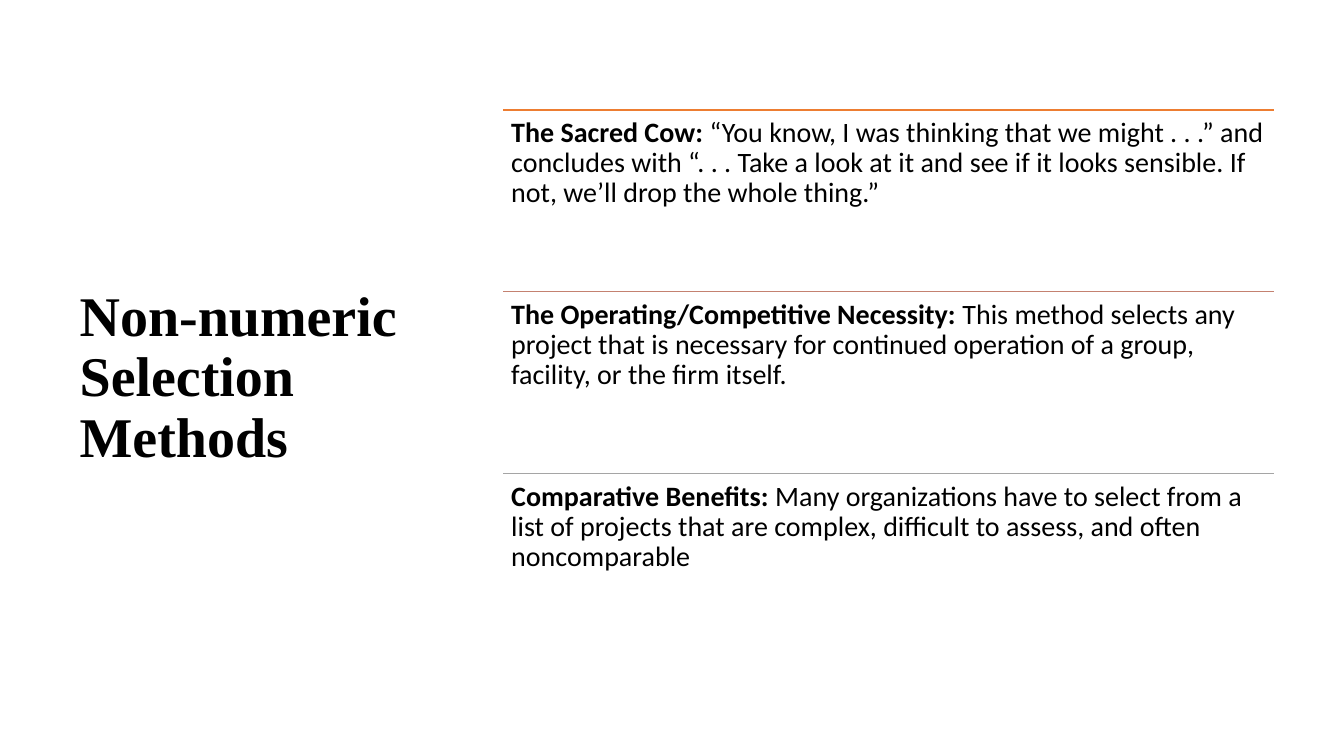
import pptx
import pptx.util
import pptx.dml.color
import pptx.enum.shapes
import pptx.enum.text
import pptx.oxml.ns
from lxml import etree

Inches = pptx.util.Inches
Pt = pptx.util.Pt
WIDTH, HEIGHT = 13.33, 7.5
LEFT, TOP, COL, ROW = 4.99, 1.09, 7.65, 1.805
COLORS = {"text": "000000", "orange": "ED7D31", "rose": "C48170", "gray": "A5A5A5"}
TITLE_FONT = {"name": "Times New Roman", "size": Pt(40), "bold": True}
BODY_FONT = {"name": "Calibri", "size": Pt(20)}
TITLE_BOX = {"left": Inches(0.69), "top": Inches(0.7),
             "width": Inches(3.74), "height": Inches(6.11)}
TITLE_FRAME = {"word_wrap": True,
               "auto_size": pptx.enum.text.MSO_AUTO_SIZE.NONE,
               "vertical_anchor": pptx.enum.text.MSO_ANCHOR.MIDDLE}
INSET = Inches(0.08)
BODY_FRAME = {"word_wrap": True,
              "vertical_anchor": pptx.enum.text.MSO_ANCHOR.TOP,
              "margin_left": INSET, "margin_top": INSET,
              "margin_right": INSET, "margin_bottom": INSET}
PARAGRAPH = {"line_spacing": 0.9, "alignment": pptx.enum.text.PP_ALIGN.LEFT,
             "space_before": Pt(0)}
METHODS = [
    ("orange", "The Sacred Cow: ",
     "“You know, I was thinking that we might . . .” and concludes with “. . . Take a look "
     "at it and see if it looks sensible. If not, we’ll drop the whole thing.”"),
    ("rose", "The Operating/Competitive Necessity: ",
     "This method selects any project that is necessary for continued operation of a group, "
     "facility, or the firm itself."),
    ("gray", "Comparative Benefits: ",
     "Many organizations have to select from a list of projects that are complex, difficult "
     "to assess, and often noncomparable"),
]


def apply(target, values):
    for name, value in values.items():
        setattr(target, name, value)


def rgb(name):
    return pptx.dml.color.RGBColor.from_string(COLORS[name])


def add_run(p, text, font):
    r = p.add_run()
    r.text = text
    apply(r.font, font)
    r.font.color.rgb = rgb("text")


def add_title(s, text):
    sp = s.shapes.title
    apply(sp, TITLE_BOX)
    apply(sp.text_frame, TITLE_FRAME)
    p = sp.text_frame.paragraphs[0]
    apply(p, PARAGRAPH)
    add_run(p, text, TITLE_FONT)


def add_rule(s, top, color):
    y = Inches(top)
    line = s.shapes.add_connector(pptx.enum.shapes.MSO_CONNECTOR.STRAIGHT,
                                  Inches(LEFT), y, Inches(LEFT + COL), y)
    line.line.color.rgb = rgb(color)
    line.line.width = Pt(1)
    etree.SubElement(line._element.spPr, pptx.oxml.ns.qn("a:effectLst"))


def add_method(s, top, heading, text):
    sp = s.shapes.add_textbox(Inches(LEFT), Inches(top), Inches(COL), Inches(ROW))
    apply(sp.text_frame, BODY_FRAME)
    p = sp.text_frame.paragraphs[0]
    apply(p, PARAGRAPH)
    add_run(p, heading, {**BODY_FONT, "bold": True})
    add_run(p, text, {**BODY_FONT, "bold": False})


def main():
    prs = pptx.Presentation()
    apply(prs, {"slide_width": Inches(WIDTH), "slide_height": Inches(HEIGHT)})
    s = prs.slides.add_slide(prs.slide_layouts[5])
    add_title(s, "Non-numeric Selection Methods")
    for row, (color, heading, text) in enumerate(METHODS):
        top = TOP + row * ROW
        add_rule(s, top, color)
        add_method(s, top, heading, text)
    prs.save("out.pptx")


if __name__ == "__main__":
    main()
